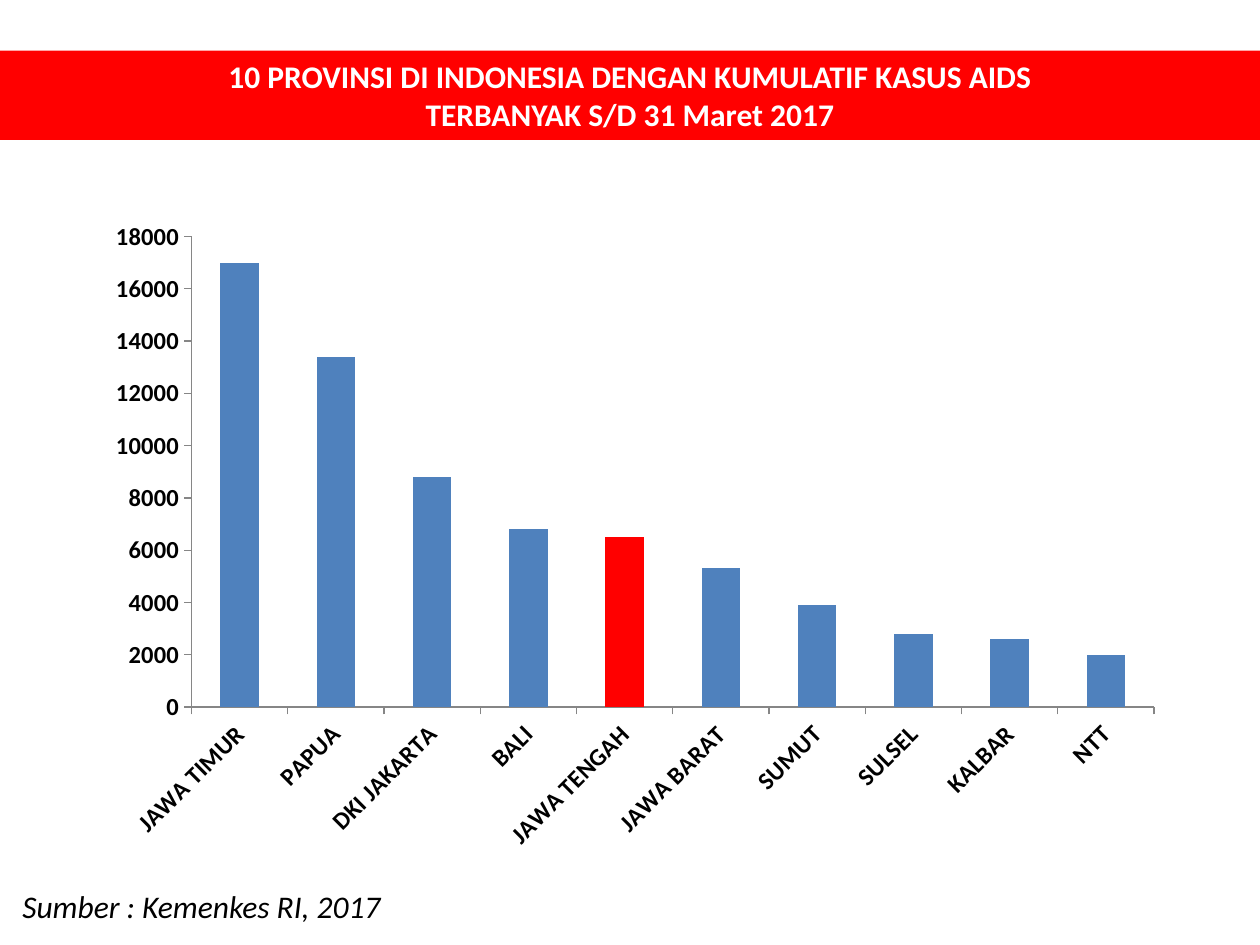
from pptx import Presentation
from pptx import util as u
from pptx.chart import data as cd
from pptx.dml import color as col
from pptx.enum import chart as ch, shapes, text

CASES = {
    "JAWA TIMUR": 17000, "PAPUA": 13400, "DKI JAKARTA": 8800,
    "BALI": 6800, "JAWA TENGAH": 6500, "JAWA BARAT": 5300,
    "SUMUT": 3900, "SULSEL": 2800, "KALBAR": 2600, "NTT": 2000,
}
FOCUS = "JAWA TENGAH"
RED, BLUE, GREY, BLACK, WHITE = "FF0000", "4F81BD", "868686", "000000", "FFFFFF"


def tint(code):
    return col.RGBColor.from_string(code)


def paint(fill, code):
    fill.solid()
    fill.fore_color.rgb = tint(code)


class Deck:
    face = "Calibri"
    size = 18

    def __init__(self, wide, high):
        self.file = Presentation()
        self.file.slide_width = u.Cm(wide)
        self.file.slide_height = u.Cm(high)
        self.slide = self.file.slides.add_slide(self.file.slide_layouts[6])

    def font(self, font, code, size=None, bold=False, slant=False):
        font.name = self.face
        font.size = u.Pt(size or self.size)
        font.bold = bold
        font.italic = slant
        font.color.rgb = tint(code)

    def style(self, frame, code, align, **looks):
        for para in frame.paragraphs:
            para.alignment = align
            for run in para.runs:
                self.font(run.font, code, **looks)

    def note(self, words, *box):
        frame = self.slide.shapes.add_textbox(*map(u.Cm, box)).text_frame
        frame.word_wrap = False
        frame.text = words
        self.style(frame, BLACK, text.PP_ALIGN.LEFT, slant=True)

    def band(self, words, *box):
        shape = self.slide.shapes.add_shape(
            shapes.MSO_SHAPE.RECTANGLE, *map(u.Cm, box))
        shape.shadow.inherit = False
        paint(shape.fill, RED)
        shape.line.fill.background()
        frame = shape.text_frame
        frame.word_wrap = True
        frame.text = words
        self.style(frame, WHITE, text.PP_ALIGN.CENTER, bold=True)

    def axis(self, axis):
        axis.has_major_gridlines = False
        axis.major_tick_mark = ch.XL_TICK_MARK.OUTSIDE
        axis.minor_tick_mark = ch.XL_TICK_MARK.NONE
        axis.format.line.color.rgb = tint(GREY)
        axis.format.line.width = u.Pt(0.75)
        self.font(axis.tick_labels.font, BLACK, size=14, bold=True)

    def bars(self, cases, focus, *box):
        data = cd.CategoryChartData(number_format="0")
        data.categories = list(cases)
        data.add_series("Series 1", list(cases.values()))
        chart = self.slide.shapes.add_chart(
            ch.XL_CHART_TYPE.COLUMN_CLUSTERED, *map(u.Cm, box), data).chart
        chart.has_legend = False
        chart.has_title = False
        self.font(chart.font, BLACK, size=10)
        self.axis(chart.category_axis)
        self.axis(chart.value_axis)
        chart.category_axis._element.txPr.bodyPr.set("rot", "-2700000")
        scale = chart.value_axis
        scale.minimum_scale, scale.maximum_scale = 0, 18000
        scale.major_unit = 2000
        plot = chart.plots[0]
        plot.vary_by_categories = False
        plot.gap_width = 150
        row = plot.series[0]
        row.invert_if_negative = False
        paint(row.format.fill, BLUE)
        point = row.points[list(cases).index(focus)]
        paint(point.format.fill, RED)

    def save(self):
        self.file.save("out.pptx")


def main():
    deck = Deck(25.4, 19.05)
    deck.note("Sumber : Kemenkes RI, 2017", 0.2, 17.75, 7.82, 1.02)
    deck.band("10 PROVINSI DI INDONESIA DENGAN KUMULATIF KASUS AIDS\n"
              "TERBANYAK S/D 31 Maret 2017", 0, 1.02, 25.4, 1.8)
    deck.bars(CASES, FOCUS, 1.9, 4.2, 21.8, 13.2)
    deck.save()


if __name__ == "__main__":
    main()
